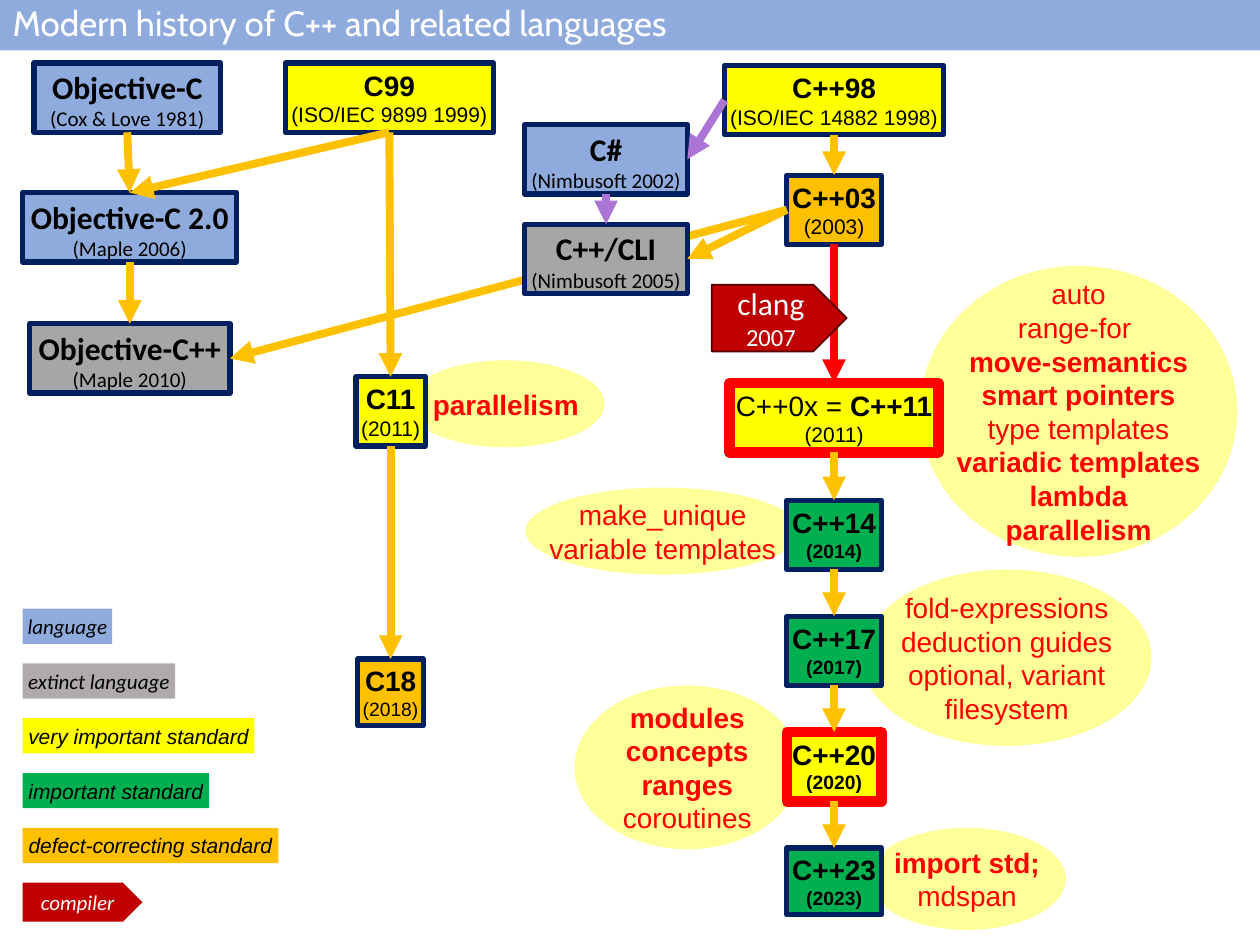
from lxml import etree
from pptx import Presentation
from pptx.dml.color import RGBColor as RGB
from pptx.enum.shapes import MSO_CONNECTOR as Conn, MSO_SHAPE as Kind
from pptx.enum.text import MSO_ANCHOR as Anchor, PP_ALIGN as Align
from pptx.oxml.ns import qn
from pptx.util import Inches, Pt

BLUE = RGB(0x8F, 0xAA, 0xDC)
GRAY = RGB(0xA6, 0xA6, 0xA6)
SILVER = RGB(0xAF, 0xAB, 0xAB)
YELLOW = RGB(0xFF, 0xFF, 0x00)
CREAM = RGB(0xFF, 0xFF, 0x99)
GREEN = RGB(0x00, 0xB0, 0x50)
GOLD = RGB(0xFF, 0xC0, 0x00)
NAVY = RGB(0x00, 0x20, 0x60)
RED = RGB(0xFF, 0x00, 0x00)
CRIMSON = RGB(0xC0, 0x00, 0x00)
MAROON = RGB(0x54, 0x00, 0x00)
PURPLE = RGB(0xAB, 0x74, 0xD5)
BLACK = RGB(0x00, 0x00, 0x00)
WHITE = RGB(0xFF, 0xFF, 0xFF)

TOP, LEFT, BOTTOM, RIGHT = range(4)  # connection sites of a rectangle


def write(shape, lines, sizes, font="Arial", color=BLACK, align=Align.CENTER,
          anchor=Anchor.TOP, inset=0.04, wrap=False, italic=False, space=None):
    """Write one paragraph per line; text between asterisks is bold."""
    frame = shape.text_frame
    frame.word_wrap = wrap
    frame.vertical_anchor = anchor
    if inset is not None:
        frame.margin_left = frame.margin_right = Inches(inset)
        frame.margin_top = frame.margin_bottom = Inches(inset)
    for i, line in enumerate(lines):
        para = frame.add_paragraph() if i else frame.paragraphs[0]
        para.alignment = align
        if space:
            para.line_spacing = space
        for j, part in enumerate(line.split("*")):
            if not part:
                continue
            run = para.add_run()
            run.text = part
            run.font.name = font
            run.font.size = Pt(sizes[min(i, len(sizes) - 1)])
            run.font.bold = j % 2 == 1
            run.font.italic = italic
            run.font.color.rgb = color


def draw(slide, kind, box, fill, edge=None, weight=3):
    shape = slide.shapes.add_shape(kind, *map(Inches, box))
    shape.shadow.inherit = False
    shape.fill.solid()
    shape.fill.fore_color.rgb = fill
    if edge is None:
        shape.line.fill.background()
    else:
        shape.line.color.rgb = edge
        shape.line.width = Pt(weight)
    return shape


def link(slide, start, out, end, into, color=GOLD):
    line = slide.shapes.add_connector(Conn.STRAIGHT, 0, 0, 0, 0)
    line.begin_connect(start, out)
    line.end_connect(end, into)
    line.line.color.rgb = color
    line.line.width = Pt(4.5)
    etree.SubElement(line.line._get_or_add_ln(), qn("a:tailEnd"), type="triangle")
    etree.SubElement(line._element.spPr, qn("a:effectLst"))


def header(slide, box):
    title = slide.shapes.title
    title.left, title.top, title.width, title.height = map(Inches, box)
    title.fill.solid()
    title.fill.fore_color.rgb = BLUE
    write(title, ["Modern history of C++ and related languages"], [20],
          font="Cabin", color=WHITE, align=Align.LEFT, anchor=Anchor.MIDDLE,
          inset=None, wrap=True, space=0.9)


def note(slide, box, lines):
    oval = draw(slide, Kind.OVAL, box, CREAM)
    write(oval, lines, [16], color=RED, anchor=Anchor.MIDDLE)


def node(slide, box, name, date, fill, font="Arial", sizes=(16, 12),
         edge=NAVY, weight=3):
    shape = draw(slide, Kind.RECTANGLE, box, fill, edge, weight)
    write(shape, [name, date], sizes, font=font)
    return shape


def lang(slide, mid, top, wide, name, date, fill=BLUE):
    return node(slide, (mid - wide / 2, top, wide, 0.55), f"*{name}*", date,
                fill, font="Calibri", sizes=(18, 12))


def std(slide, mid, top, wide, name, date, fill=YELLOW, high=0.55, **style):
    return node(slide, (mid - wide / 2, top, wide, high), name, date, fill, **style)


def notes(slide, x, y):
    for left, top, wide, high, lines in (
        (1.33, 3.33, 1.79, 1.3, ["*modules*", "*concepts*", "*ranges*", "coroutines"]),
        (3.61, 2.41, 2.3, 1.4, ["fold-expressions", "deduction guides",
                                "optional, variant", "filesystem"]),
        (0.94, 1.76, 2.18, 0.69, ["make_unique", "variable templates"]),
        (3.66, 4.46, 1.57, 0.81, ["*import std;*", "mdspan"]),
        (4.07, 0, 2.52, 2.31, ["auto", "range-for ", "*move-semantics*",
                               "*smart pointers*", "type templates",
                               "*variadic templates*", "*lambda*", "*parallelism*"]),
        (0, 0.75, 1.57, 0.69, ["*parallelism*"]),
    ):
        note(slide, (x + left, y + top, wide, high), lines)


def cpp(slide, mid, top):
    """Column of C++ standards, returned from oldest to newest."""
    alert = {"edge": RED, "weight": 6}
    col = [
        std(slide, mid, top, 1.74, "*C++98*", "(ISO/IEC 14882 1998)"),
        std(slide, mid, top + 0.87, 0.75, "*C++03*", "(2003)", GOLD),
        std(slide, mid, top + 2.52, 1.66, "C++0x = *C++11*", "(2011)", **alert),
    ]
    for i, (year, fill, style) in enumerate((
            (14, GREEN, {}), (17, GREEN, {}), (20, YELLOW, alert),
            (23, GREEN, {"high": 0.53}))):
        col.append(std(slide, mid, top + 3.45 + 0.92 * i, 0.75, f"*C++{year}*",
                       f"*(20{year})*", fill, sizes=(16, 11), **style))
    return col


def history(slide, x, y):
    # Boxes under the long arrows
    col = cpp(slide, x + 6.62, y + 0.02)
    objc = lang(slide, x + 1.01, y, 1.48, "Objective-C", "(Cox & Love 1981)")
    objc2 = lang(slide, x + 1.03, y + 1.03, 1.7, "Objective-C 2.0", "(Maple 2006)")
    objcpp = lang(slide, x + 1.03, y + 2.07, 1.59, "Objective-C++", "(Maple 2010)", GRAY)
    c11 = std(slide, x + 3.1, y + 2.49, 0.55, "*C11*", "(2011)")
    c18 = std(slide, x + 3.1, y + 4.73, 0.52, "*C18*", "(2018)", GOLD,
              high=0.53, sizes=(16, 11))
    link(slide, col[1], LEFT, objcpp, RIGHT)

    # Boxes over the long arrows
    sharp = lang(slide, x + 4.81, y + 0.49, 1.29, "C#", "(Nimbusoft 2002)")
    cli = lang(slide, x + 4.81, y + 1.28, 1.29, "C++/CLI", "(Nimbusoft 2005)", GRAY)
    c99 = std(slide, x + 3.09, y, 1.65, "*C99*", "(ISO/IEC 9899 1999)")

    # Descent from one box to the next
    for chain in ([objc, objc2, objcpp], [c99, objc2], [c99, c11, c18], col):
        for old, new in zip(chain, chain[1:]):
            color = RED if new is col[2] else GOLD
            link(slide, old, BOTTOM, new, TOP, color)
    link(slide, col[0], LEFT, sharp, RIGHT, PURPLE)
    link(slide, sharp, BOTTOM, cli, TOP, PURPLE)
    link(slide, col[1], LEFT, cli, RIGHT)

    # Compiler
    tag = draw(slide, Kind.PENTAGON, (x + 5.65, y + 1.76, 1.07, 0.53),
               CRIMSON, MAROON, 1)
    write(tag, ["clang", "2007"], (18, 14), font="Calibri", color=WHITE,
          anchor=Anchor.MIDDLE, inset=None, wrap=True)


def legend(slide, x, y):
    step = 0.435
    for i, (label, wide, fill, font) in enumerate((
        ("language", 0.71, BLUE, "Calibri"),
        ("extinct language", 1.21, SILVER, "Calibri"),
        ("very important standard", 1.84, YELLOW, "Arial"),
        ("important standard", 1.48, GREEN, "Arial"),
        ("defect-correcting standard", 2.03, GOLD, "Arial"),
    )):
        key = draw(slide, Kind.RECTANGLE, (x, y + step * i, wide, 0.28), fill)
        write(key, [label], [12], font=font, italic=True)
    key = draw(slide, Kind.PENTAGON, (x, y + step * 5, 0.95, 0.31), CRIMSON)
    write(key, ["compiler"], [12], font="Calibri", color=WHITE, italic=True,
          anchor=Anchor.MIDDLE, inset=None, wrap=True)


def main():
    deck = Presentation()
    deck.slide_width, deck.slide_height = Inches(10), Inches(7.5)
    slide = deck.slides.add_slide(deck.slide_layouts[5])
    header(slide, (0, 0, 10, 0.4))
    notes(slide, 3.23, 2.11)
    history(slide, 0, 0.5)
    legend(slide, 0.18, 4.83)
    deck.save("out.pptx")


if __name__ == "__main__":
    main()
